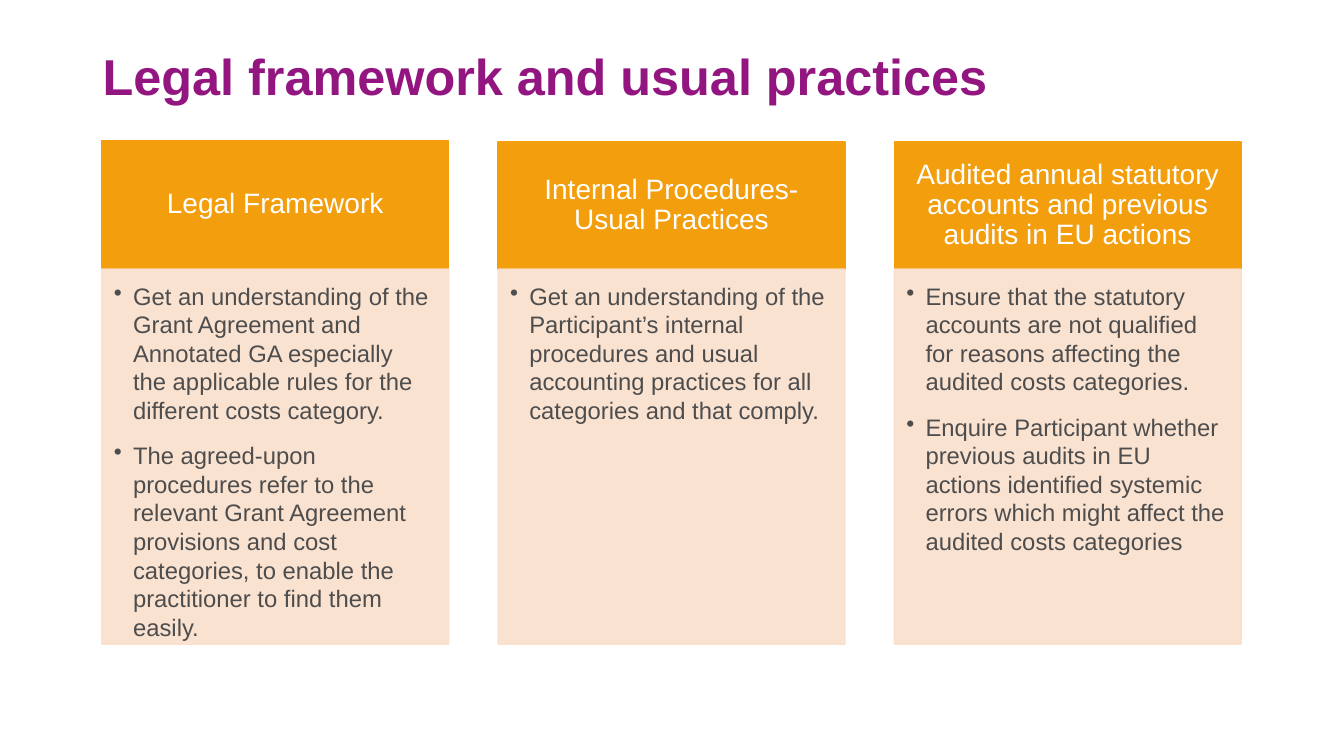
from dataclasses import dataclass

from lxml.etree import SubElement
from pptx import Presentation
from pptx.dml.color import RGBColor as RGB
from pptx.enum.shapes import MSO_SHAPE as SHAPE
from pptx.enum.text import MSO_ANCHOR as ANCHOR, PP_ALIGN as ALIGN
from pptx.oxml.ns import qn
from pptx.util import Pt

PX = 9144


@dataclass(frozen=True)
class Theme:
    font: str = "Arial"
    purple: RGB = RGB(0x93, 0x16, 0x80)
    orange: RGB = RGB(0xF3, 0x9E, 0x0C)
    peach: RGB = RGB(0xFA, 0xDF, 0xCC)
    white: RGB = RGB(0xFF, 0xFF, 0xFF)
    grey: RGB = RGB(0x4D, 0x4D, 0x4D)
    title_size: int = 36
    heading_size: int = 20
    body_size: int = 17


THEME = Theme()
COLUMN_LEFT, COLUMN_PITCH, COLUMN_WIDTH = 101, 393, 344
HEADING_HEIGHT = 126
PANEL_TOP, PANEL_HEIGHT = 267, 372
BULLET_INDENT = 19
PANEL_OPACITY = 90

COLUMNS = [
    (140, "Legal Framework", [
        "Get an understanding of the Grant Agreement and Annotated GA especially "
        "the applicable rules for the different costs category.",
        "The agreed-upon procedures refer to the relevant Grant Agreement provisions "
        "and cost categories, to enable the practitioner to find them easily.",
    ]),
    (141, "Internal Procedures- Usual Practices", [
        "Get an understanding of the Participant’s internal procedures and usual "
        "accounting practices for all categories and that comply.",
    ]),
    (141, "Audited annual statutory accounts and previous audits in EU actions", [
        "Ensure that the statutory accounts are not qualified for reasons affecting "
        "the audited costs categories.",
        "Enquire Participant whether previous audits in EU actions identified "
        "systemic errors which might affect the audited costs categories",
    ]),
]


def emu(*lengths):
    return [length * PX for length in lengths]


def set_frame(frame, anchor, insets):
    frame.word_wrap = True
    frame.vertical_anchor = anchor
    (frame.margin_left, frame.margin_top,
     frame.margin_right, frame.margin_bottom) = emu(*insets)


def style_runs(paragraph, size, color, bold=False):
    for run in paragraph.runs:
        run.font.name = THEME.font
        run.font.size = Pt(size)
        run.font.bold = bold
        run.font.color.rgb = color


def add_bullet(paragraph):
    properties = paragraph._p.get_or_add_pPr()
    properties.set("marL", str(BULLET_INDENT * PX))
    properties.set("indent", str(-BULLET_INDENT * PX))
    SubElement(properties, qn("a:buChar"), char="•")


def add_block(slide, box, color, opacity=100):
    block = slide.shapes.add_shape(SHAPE.RECTANGLE, *emu(*box))
    block.shadow.inherit = False
    block.line.width = Pt(1)
    for fill in (block.fill, block.line.fill):
        fill.solid()
        fill.fore_color.rgb = color
    if opacity < 100:
        for tint in block._element.spPr.iter(qn("a:srgbClr")):
            SubElement(tint, qn("a:alpha"), val=str(opacity * 1000))
    return block.text_frame


def add_title(slide, text):
    frame = slide.shapes.add_textbox(*emu(92, 39, 1150, 66)).text_frame
    set_frame(frame, ANCHOR.BOTTOM, (10, 5, 10, 0))
    frame.text = text
    style_runs(frame.paragraphs[0], THEME.title_size, THEME.purple, bold=True)


def add_heading(slide, left, top, text):
    frame = add_block(slide, (left, top, COLUMN_WIDTH, HEADING_HEIGHT), THEME.orange)
    set_frame(frame, ANCHOR.MIDDLE, (12, 8, 12, 8))
    frame.text = text
    heading = frame.paragraphs[0]
    heading.alignment = ALIGN.CENTER
    heading.line_spacing = 0.9
    style_runs(heading, THEME.heading_size, THEME.white)


def add_panel(slide, left, points):
    box = (left, PANEL_TOP, COLUMN_WIDTH, PANEL_HEIGHT)
    frame = add_block(slide, box, THEME.peach, PANEL_OPACITY)
    set_frame(frame, ANCHOR.TOP, (12, 12, 16, 16))
    frame.text = "\n".join(points)
    for point in frame.paragraphs:
        add_bullet(point)
        point.alignment = ALIGN.LEFT
        point.space_after = Pt(12)
        style_runs(point, THEME.body_size, THEME.grey)


def main():
    deck = Presentation()
    deck.slide_width, deck.slide_height = emu(1333, 750)
    slide = deck.slides.add_slide(deck.slide_layouts[6])
    add_title(slide, "Legal framework and usual practices")
    for index, (heading_top, heading, points) in enumerate(COLUMNS):
        left = COLUMN_LEFT + index * COLUMN_PITCH
        add_heading(slide, left, heading_top, heading)
        add_panel(slide, left, points)
    deck.save("out.pptx")


if __name__ == "__main__":
    main()
